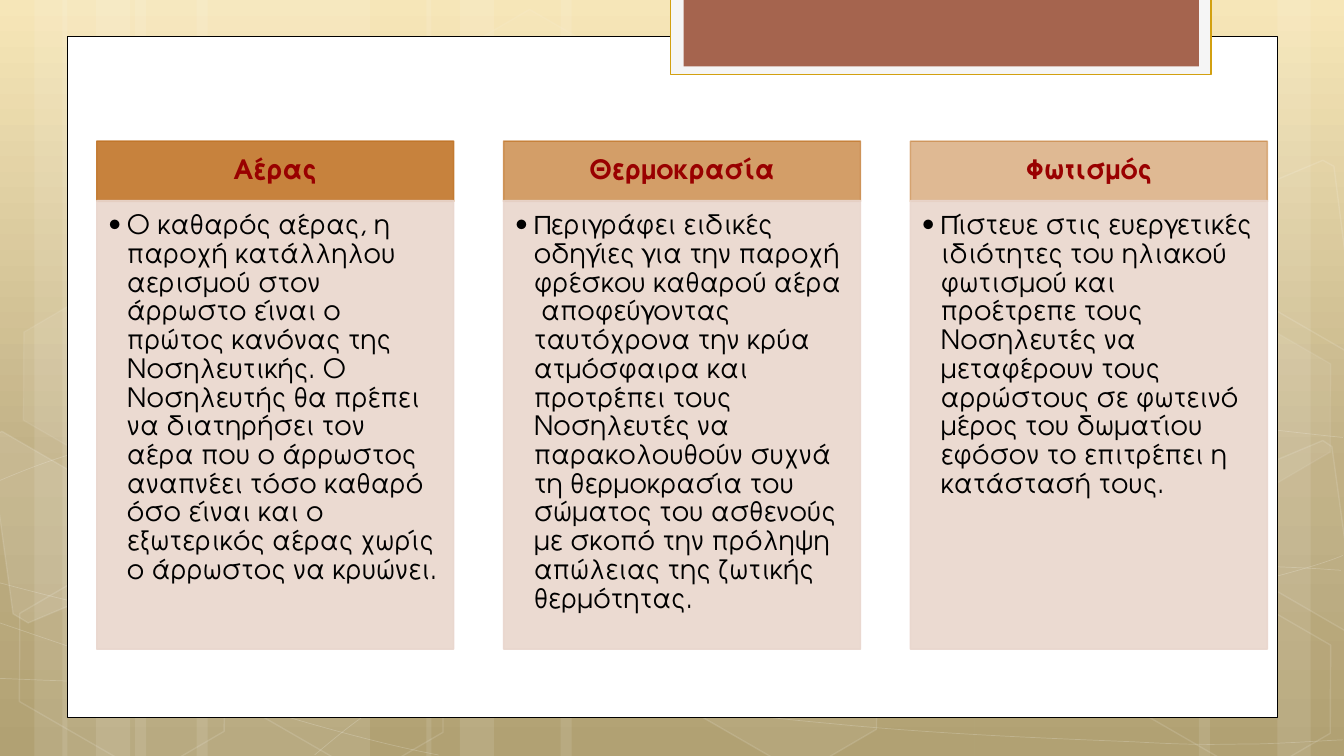
from lxml.etree import SubElement
from pptx import Presentation
from pptx.dml.color import RGBColor
from pptx.enum.shapes import MSO_SHAPE as SHAPE
from pptx.enum.text import MSO_ANCHOR as ANCHOR, PP_ALIGN as ALIGN
from pptx.oxml import parse_xml
from pptx.oxml.ns import nsdecls, qn
from pptx.util import Inches, Pt

FONT = "TeX Gyre Adventor"
WHITE = "FFFFFF"
SKY = [(0, "F6E4B0"), (62, "BAA878"), (100, "A99764")]

# left, width of the pale vertical bands
BANDS = [(1.34, 2.33), (0, 0.67), (0.34, 1.11), (1.95, 2.33), (0.62, 0.67), (0.95, 1.11),
         (9.67, 2.33), (12.67, 0.67), (11.89, 1.11), (5.56, 4.11), (4.23, 0.67), (4.56, 1.11)]

# start point, then two control points and an end point for each bend
CURVES = [
    [(-0.01, 6.73), (0.71, 6.76), (1.43, 6.79), (2.43, 6.78), (3.43, 6.77), (4.66, 6.75),
     (5.99, 6.65), (7.33, 6.55), (9.22, 6.36), (10.45, 6.17), (11.67, 5.98), (12.92, 5.68),
     (13.32, 5.51)],
    [(-0.01, 4.77), (0.37, 4.61), (0.75, 4.46), (1.51, 4.31), (2.27, 4.16), (3.34, 3.94),
     (4.52, 3.87), (5.71, 3.8), (7.14, 3.79), (8.61, 3.87), (10.08, 3.95), (12.52, 4.26),
     (13.32, 4.34)],
    [(-0.03, 6.17), (1.58, 6.72), (3.19, 7.27), (4.35, 7.49)],
    [(-0.01, 5.78), (0.4, 5.89), (0.82, 6), (1.6, 6.16), (2.37, 6.31), (3.53, 6.56),
     (4.64, 6.73), (5.76, 6.9), (7.16, 7.08), (8.26, 7.18), (9.37, 7.29), (10.55, 7.33),
     (11.26, 7.36), (11.96, 7.4), (12.14, 7.38), (12.49, 7.38), (12.83, 7.37), (13.08, 7.35),
     (13.32, 7.34)],
    [(3.12, 7.49), (3.36, 7.29), (3.59, 7.09), (3.92, 6.91), (4.24, 6.73), (4.69, 6.53),
     (5.06, 6.39), (5.43, 6.25), (5.66, 6.19), (6.15, 6.09), (6.64, 5.99), (7.54, 5.85),
     (8, 5.78), (8.47, 5.71), (8.54, 5.71), (8.96, 5.69), (9.37, 5.66), (10.02, 5.63),
     (10.48, 5.62), (10.94, 5.61), (11.71, 5.62), (11.71, 5.62), (12, 5.62), (12.3, 5.62),
     (12.59, 5.62), (12.84, 5.63), (13.06, 5.64), (13.18, 5.65), (13.3, 5.66), (13.26, 5.65),
     (13.3, 5.66)],
]

# left, top, fill opacity (0 for none), line opacity
HEXAGONS = [(4.34, 0.36, 4, 8), (6.51, 5.89, 6, 12), (0.04, 5.91, 0, 12), (0.08, 3.12, 7, 8),
            (2.21, 5.92, 0, 12), (11.01, 5.93, 0, 12), (11.01, 3.14, 7, 8)]

# outline, fill opacity
CUT_HEXAGONS = [
    ([(-0.11, 4.34), (0.02, 4.28), (1.04, 4.87), (1.16, 5.81), (0.28, 6.18), (0.13, 6.09)], 10),
    ([(12.24, 4.74), (13.12, 4.37), (13.21, 4.43), (13.46, 6.25), (13.38, 6.28),
      (12.36, 5.69)], 4),
    ([(12.24, 1.96), (13.12, 1.59), (13.23, 1.65), (13.46, 3.46), (13.38, 3.5),
      (12.36, 2.91)], 0),
]

# heading, heading opacity, text
COLUMNS = [
    ("Αέρας", 90,
     "Ο καθαρός αέρας, η παροχή κατάλληλου αερισμού στον άρρωστο είναι ο πρώτος κανόνας της "
     "Νοσηλευτικής. Ο Νοσηλευτής θα πρέπει να διατηρήσει τον αέρα που ο άρρωστος αναπνέει "
     "τόσο καθαρό όσο είναι και ο εξωτερικός αέρας χωρίς ο άρρωστος να κρυώνει."),
    ("Θερμοκρασία", 70,
     "Περιγράφει ειδικές οδηγίες για την παροχή φρέσκου καθαρού αέρα  αποφεύγοντας "
     "ταυτόχρονα την κρύα ατμόσφαιρα και προτρέπει τους Νοσηλευτές να παρακολουθούν συχνά "
     "τη θερμοκρασία του σώματος του ασθενούς με σκοπό την πρόληψη απώλειας της ζωτικής "
     "θερμότητας."),
    ("Φωτισμός", 50,
     "Πίστευε στις ευεργετικές ιδιότητες του ηλιακού φωτισμού και προέτρεπε τους Νοσηλευτές "
     "να μεταφέρουν τους αρρώστους σε φωτεινό μέρος του δωματίου εφόσον το επιτρέπει η "
     "κατάστασή τους."),
]


def paint(fill, color, opacity=100):
    """Fill with a solid colour; opacity is in percent, 0 means no fill."""
    if not opacity:
        fill.background()
        return
    fill.solid()
    fill.fore_color.rgb = RGBColor.from_string(color)
    if opacity < 100:
        clr = fill._xPr.find(".//" + qn("a:srgbClr"))
        SubElement(clr, qn("a:alpha")).set("val", str(opacity * 1000))


def style(sp, fill=(WHITE, 0), line=(WHITE, 0), width=1):
    """Style a shape; fill and line are (colour, opacity) pairs."""
    sp.shadow.inherit = False
    paint(sp.fill, *fill)
    paint(sp.line.fill, *line)
    sp.line.width = Pt(width)


def add_box(slide, at, kind=SHAPE.RECTANGLE, **look):
    sp = slide.shapes.add_shape(kind, *map(Inches, at))
    style(sp, **look)
    return sp


def add_outline(slide, points, close, **look):
    pts = [(Inches(x), Inches(y)) for x, y in points]
    builder = slide.shapes.build_freeform(*pts[0])
    builder.add_line_segments(pts[1:], close=close)
    sp = builder.convert_to_shape()
    style(sp, **look)
    return sp


def bend(sp):
    """Turn each three line segments of a freeform into one cubic Bézier curve."""
    segments = list(sp._element.iter(qn("a:lnTo")))
    for i in range(0, len(segments), 3):
        curve = SubElement(segments[i].getparent(), qn("a:cubicBezTo"))
        for segment in segments[i:i + 3]:
            curve.append(segment[0])
            segment.getparent().remove(segment)


def write(sp, text, color, insets, anchor, align, bold=False, bullet=False):
    tf = sp.text_frame
    sides = ("margin_left", "margin_top", "margin_right", "margin_bottom")
    frame = {"word_wrap": True, "vertical_anchor": anchor, **dict(zip(sides, map(Inches, insets)))}
    for name, value in frame.items():
        setattr(tf, name, value)
    p = tf.paragraphs[0]
    if bullet:
        pPr = p._p.get_or_add_pPr()
        pPr.set("marL", str(Inches(0.19)))
        pPr.set("indent", str(Inches(-0.19)))
        SubElement(pPr, qn("a:buFont")).set("typeface", FONT)
        SubElement(pPr, qn("a:buChar")).set("char", "•")
    p.alignment, p.line_spacing = align, 0.9
    r = p.add_run()
    r.text = text
    for name, value in {"name": FONT, "size": Pt(19), "bold": bold}.items():
        setattr(r.font, name, value)
    paint(r.font.fill, color)


def set_background(slide):
    stops = "".join(f'<a:gs pos="{pos * 1000}"><a:srgbClr val="{color}"/></a:gs>'
                    for pos, color in SKY)
    fill = slide.background.fill
    fill.gradient()
    fill.gradient_angle = 270
    gs_list = fill._xPr.find(".//" + qn("a:gsLst"))
    gs_list.getparent().replace(
        gs_list, parse_xml(f'<a:gsLst {nsdecls("a")}>{stops}</a:gsLst>'))


def add_scenery(slide):
    for left, width in BANDS:
        add_box(slide, (left, 0, width, 7.5), fill=(WHITE, 10))
    for curve in CURVES:
        bend(add_outline(slide, curve, False, line=(WHITE, 20), width=0.5))
    for left, top, fill, line in HEXAGONS:
        sp = add_box(slide, (left, top, 2.34, 1.52), SHAPE.HEXAGON,
                     fill=(WHITE, fill), line=(WHITE, line))
        sp.adjustments[0] = 0.285
        sp.rotation = 30
    for outline, fill in CUT_HEXAGONS:
        add_outline(slide, outline, True, fill=(WHITE, fill), line=(WHITE, 12))


def add_column(slide, left, heading, opacity, text):
    tint, pale = ("C17529", opacity), ("E9D6CD", 90)
    head = add_box(slide, (left, 1.4, 3.54, 0.6), fill=tint, line=tint)
    write(head, heading, "990000", (0.15, 0.08, 0.15, 0.08), ANCHOR.MIDDLE, ALIGN.CENTER,
          bold=True)
    body = add_box(slide, (left, 1.99, 3.54, 4.45), fill=pale, line=pale)
    write(body, text, "000000", (0.11, 0.11, 0.15, 0.17), ANCHOR.TOP, ALIGN.LEFT, bullet=True)


def main():
    prs = Presentation()
    prs.slide_width, prs.slide_height = Inches(13.33), Inches(7.5)
    slide = prs.slides.add_slide(prs.slide_layouts[6])
    set_background(slide)
    add_scenery(slide)
    add_box(slide, (0.67, 0.36, 12, 6.76), fill=(WHITE, 100), line=("000000", 100), width=0.5)
    add_box(slide, (6.65, -0.02, 5.36, 0.76), fill=("F5F5F5", 100), line=("D2A010", 100))
    add_box(slide, (6.78, -0.02, 5.11, 0.68), fill=("A5644E", 100))
    first, last = 0.96, 9.03
    for i, column in enumerate(COLUMNS):
        add_column(slide, first + (last - first) * i / 2, *column)
    prs.save("out.pptx")


if __name__ == "__main__":
    main()
